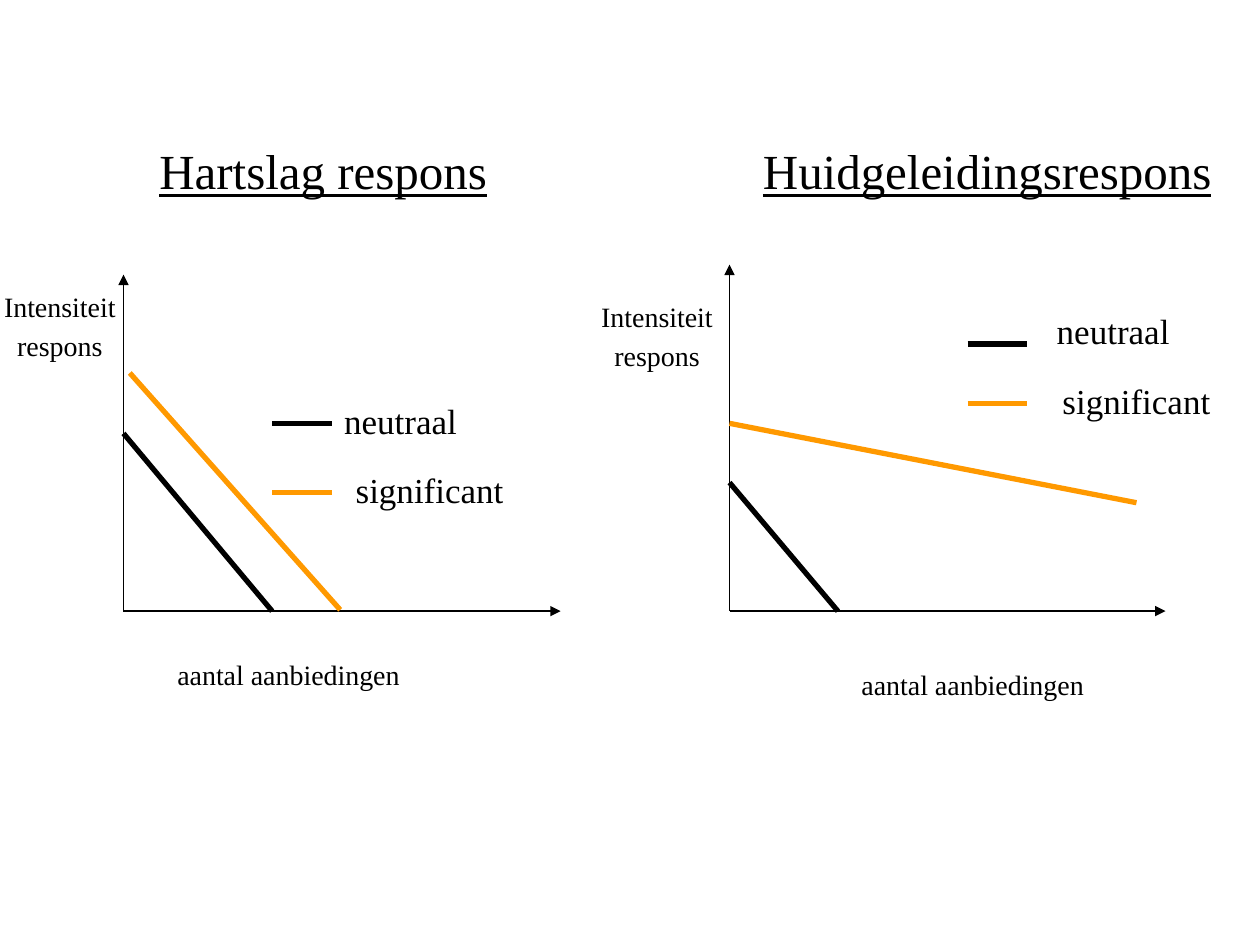
"""Build a slide comparing heart rate and skin conductance responses."""
from dataclasses import dataclass
from typing import NamedTuple

from lxml.etree import SubElement
from pptx import Presentation
from pptx.dml.color import RGBColor
from pptx.enum.shapes import MSO_CONNECTOR
from pptx.enum.text import PP_ALIGN
from pptx.oxml.ns import qn
from pptx.util import Inches, Pt

BLACK = RGBColor(0x00, 0x00, 0x00)
ORANGE = RGBColor(0xFF, 0x99, 0x00)
FONT = "Times New Roman"
COLS, ROWS = 100, 75
BASE = 48.5
KEY_LENGTH = 4.75


class Point(NamedTuple):
    """A place in grid columns and rows."""
    x: float
    y: float


class Box(NamedTuple):
    """A text frame in grid columns and rows."""
    x: float
    y: float
    w: float
    h: float


@dataclass(frozen=True)
class Series:
    """A response line with its legend key and label."""
    name: str
    color: RGBColor
    start: Point
    end: Point
    key: Point
    label: Box


@dataclass(frozen=True)
class Panel:
    """One graph with its title, axes and series."""
    title: str
    title_box: Box
    origin_x: float
    axis_top: float
    axis_right: float
    y_label: Box
    x_label: Box
    series: tuple[Series, ...]


PANELS = (
    Panel("Hartslag respons", Box(9.5, 10.7, 32.3, 5.7), 9.8, 21.8, 44.5,
          Box(-0.8, 22.5, 11.1, 6.9), Box(13, 51.7, 19.8, 3.7),
          (Series("neutraal", BLACK, Point(9.8, 34.4), Point(21.6, BASE),
                  Point(21.6, 33.6), Box(26.3, 31.2, 11, 4.4)),
           Series("significant", ORANGE, Point(10.3, 29.6), Point(27, 48.4),
                  Point(21.6, 39.1), Box(26.4, 36.7, 15.4, 4.3)))),
    Panel("Huidgeleidingsrespons", Box(57.8, 10.7, 41.1, 5.7), 57.9, 21, 92.5,
          Box(46.6, 23.3, 11.1, 6.9), Box(67.3, 52.5, 19.8, 3.7),
          (Series("neutraal", BLACK, Point(57.9, 38.3), Point(66.5, BASE),
                  Point(76.8, 27.3), Box(81.5, 24.1, 13.7, 4.3)),
           Series("significant", ORANGE, Point(57.9, 33.6), Point(90.2, 39.9),
                  Point(76.8, 32), Box(81.5, 29.6, 17.4, 4.3)))),
)

prs = Presentation()
prs.slide_width, prs.slide_height = Inches(10), Inches(7.5)
s = prs.slides.add_slide(prs.slide_layouts[6])


def col(n: float) -> int:
    """Convert grid columns to a length."""
    return round(prs.slide_width * n / COLS)


def row(n: float) -> int:
    """Convert grid rows to a length."""
    return round(prs.slide_height * n / ROWS)


def add_line(start: Point, end: Point, color: RGBColor = BLACK,
             width: float = 3, arrow: bool = False) -> None:
    """Draw a straight line, with an arrowhead at its end if asked."""
    c = s.shapes.add_connector(MSO_CONNECTOR.STRAIGHT, col(start.x), row(start.y),
                               col(end.x), row(end.y))
    c.line.color.rgb = color
    c.line.width = Pt(width)
    if arrow:
        SubElement(c.line._get_or_add_ln(), qn("a:tailEnd"), type="triangle")
    SubElement(c._element.spPr, qn("a:effectLst"))


def add_text(text: str, box: Box, size: float, underline: bool = False) -> None:
    """Write centred text, one paragraph for each line."""
    sp = s.shapes.add_textbox(col(box.x), row(box.y), col(box.w), row(box.h))
    tf = sp.text_frame
    tf.word_wrap = False
    tf.text = text
    for i, p in enumerate(tf.paragraphs):
        p.alignment = PP_ALIGN.CENTER
        if i:
            p.space_before = Pt(size * 0.2)
        for r in p.runs:
            r.font.name = FONT
            r.font.size = Pt(size)
            r.font.color.rgb = BLACK
            if underline:
                r.font.underline = True


def draw_series(series: Series) -> None:
    """Draw a response line and its legend entry."""
    add_line(series.start, series.end, series.color)
    add_line(series.key, Point(series.key.x + KEY_LENGTH, series.key.y), series.color)
    add_text(series.name, series.label, 20)


def draw_panel(panel: Panel) -> None:
    """Draw the title, axes, axis labels and series of a graph."""
    origin = Point(panel.origin_x, BASE)
    add_text(panel.title, panel.title_box, 28, underline=True)
    for end in (Point(panel.axis_right, BASE), Point(panel.origin_x, panel.axis_top)):
        add_line(origin, end, width=0.75, arrow=True)
    add_text("Intensiteit\nrespons", panel.y_label, 16)
    add_text("aantal aanbiedingen", panel.x_label, 16)
    for series in panel.series:
        draw_series(series)


def main() -> None:
    """Draw both graphs and save the presentation."""
    for panel in PANELS:
        draw_panel(panel)
    prs.save("out.pptx")


if __name__ == "__main__":
    main()
